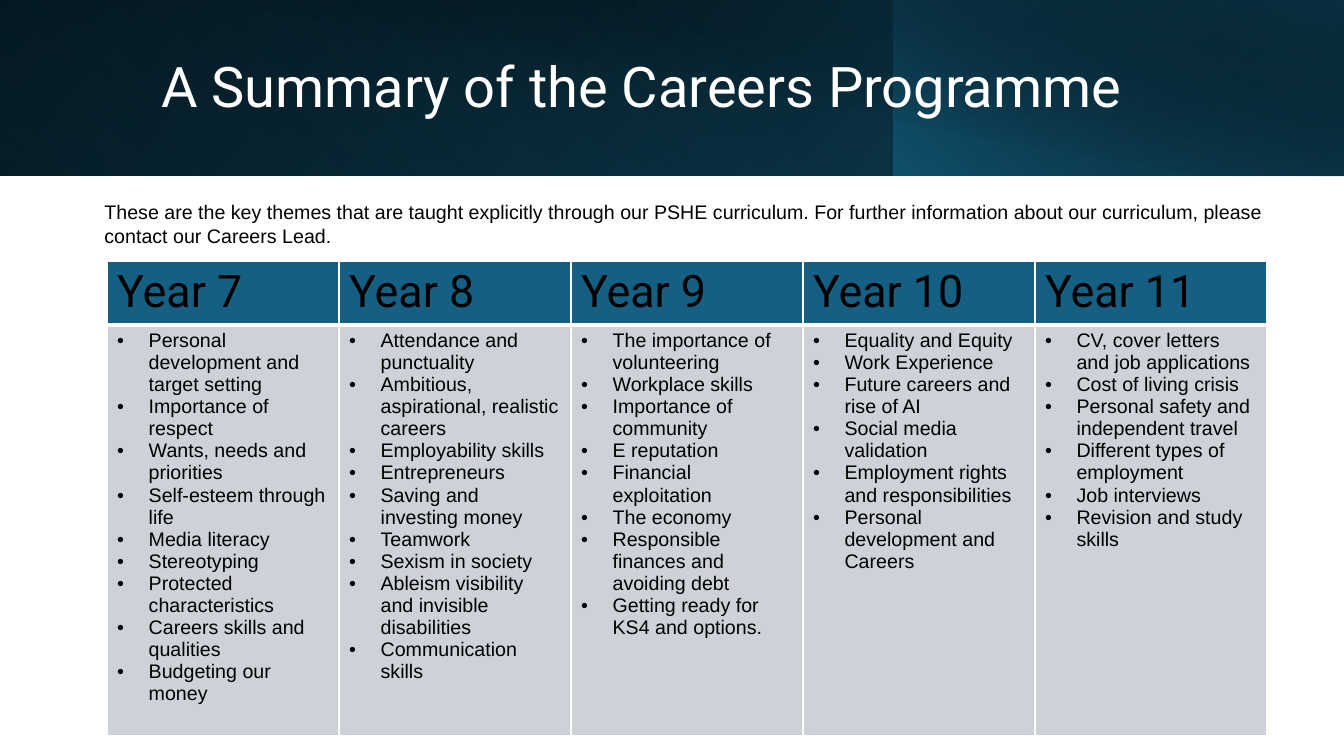
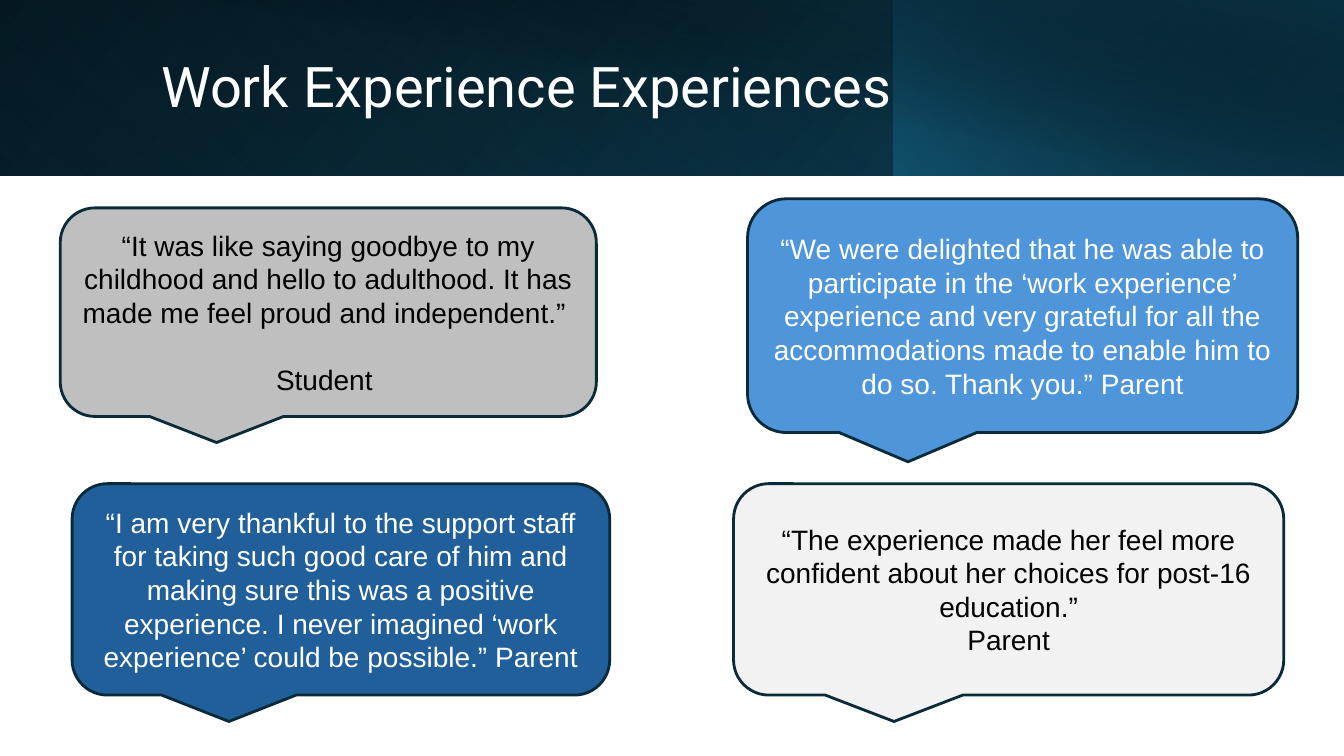
from dataclasses import dataclass

from lxml import etree
from pptx import Presentation
from pptx.dml.color import RGBColor
from pptx.enum.shapes import MSO_SHAPE
from pptx.enum.text import MSO_ANCHOR, MSO_AUTO_SIZE, PP_ALIGN
from pptx.oxml import parse_xml
from pptx.oxml.ns import nsdecls, qn
from pptx.util import Pt

RECTANGLE = MSO_SHAPE.RECTANGLE
CALLOUT = MSO_SHAPE.ROUNDED_RECTANGULAR_CALLOUT
MIDDLE = MSO_ANCHOR.MIDDLE
NO_AUTOSIZE = MSO_AUTO_SIZE.NONE
LEFT, CENTER = PP_ALIGN.LEFT, PP_ALIGN.CENTER
TITLE_ONLY = 5


@dataclass(frozen=True)
class Theme:
    black: str = "000000"
    white: str = "FFFFFF"
    teal: str = "156082"
    deep_teal: str = "0F4861"
    night: str = "0A3041"
    outline: str = "092A39"
    cell: str = "CCD2D8"
    grey: str = "BFBFBF"
    pale: str = "F2F2F2"
    sky: str = "4E95D9"
    blue: str = "215F9A"
    heading_font: str = "Roboto"
    body_font: str = "Arial"
    title_size: int = 40
    year_size: int = 32
    quote_size: int = 20
    body_size: int = 14


THEME = Theme()

# Header bands: box, rotation, mirrored, gradient angle, stops (position, colour, opacity)
BANDS = [
    ((0, 0, 960, 125.5), 0, True, 140,
     [(0, THEME.black, 100), (100, THEME.deep_teal, 100)]),
    ((0, 0, 639.5, 125.5), 180, True, 230,
     [(0, THEME.teal, 0), (20, THEME.teal, 0), (100, THEME.night, 55)]),
    ((638.5, 0, 321.5, 125.5), 0, True, 220,
     [(0, THEME.teal, 65), (100, THEME.black, 29)]),
    ((36, 0, 924, 126), 0, False, 280,
     [(0, THEME.black, 0), (50, THEME.black, 0),
      (99, THEME.night, 51), (100, THEME.night, 51)]),
]

INTRO = ("These are the key themes that are taught explicitly through our PSHE curriculum. "
         "For further information about our curriculum, please contact our Careers Lead.")

PROGRAMME = {
    "Year 7": [
        "Personal development and target setting", "Importance of respect",
        "Wants, needs and priorities", "Self-esteem through life", "Media literacy",
        "Stereotyping", "Protected characteristics", "Careers skills and qualities",
        "Budgeting our money",
    ],
    "Year 8": [
        "Attendance and punctuality", "Ambitious, aspirational, realistic careers",
        "Employability skills", "Entrepreneurs", "Saving and investing money", "Teamwork",
        "Sexism in society", "Ableism visibility and invisible disabilities",
        "Communication skills",
    ],
    "Year 9": [
        "The importance of volunteering", "Workplace skills", "Importance of community",
        "E reputation", "Financial exploitation", "The economy",
        "Responsible finances and avoiding debt", "Getting ready for KS4 and options.",
    ],
    "Year 10": [
        "Equality and Equity", "Work Experience", "Future careers and rise of AI",
        "Social media validation", "Employment rights and responsibilities",
        "Personal development and Careers",
    ],
    "Year 11": [
        "CV, cover letters and job applications", "Cost of living crisis",
        "Personal safety and independent travel", "Different types of employment",
        "Job interviews", "Revision and study skills",
    ],
}

# Quotes: box, fill, text colour, gap above the speaker, paragraphs
QUOTES = [
    ((43, 148.5, 383, 149), THEME.grey, THEME.black, 24,
     ["“It was like saying goodbye to my childhood and hello to adulthood. "
      "It has made me feel proud and independent.” ", "Student "]),
    ((534, 142, 393, 167), THEME.sky, THEME.white, 0,
     ["“We were delighted that he was able to participate in the ‘work experience’ "
      "experience and very grateful for all the accommodations made to enable him to do so. "
      "Thank you.” Parent"]),
    ((524, 345.5, 393, 151), THEME.pale, THEME.black, 0,
     ["“The experience made her feel more confident about her choices for post-16 "
      "education.”", "Parent"]),
    ((51.5, 345.5, 384, 151), THEME.blue, THEME.white, 0,
     ["“I am very thankful to the support staff for taking such good care of him and making "
      "sure this was a positive experience. I never imagined ‘work experience’ could be "
      "possible.” Parent"]),
]


def points(box):
    return [Pt(length) for length in box]


def apply(target, values):
    for name, value in values.items():
        setattr(target, name, value)


def write(frame, paragraphs, size, font=THEME.body_font, color=THEME.black,
          bulleted=False, **paragraph_format):
    """Fill a text frame with one run per paragraph."""
    for index, text in enumerate(paragraphs):
        paragraph = frame.add_paragraph() if index else frame.paragraphs[0]
        if bulleted:
            add_bullet(paragraph)
        apply(paragraph, paragraph_format)
        run = paragraph.add_run()
        run.text = text
        apply(run.font, {"name": font, "size": Pt(size), "bold": False})
        run.font.color.rgb = RGBColor.from_string(color)


def add_bullet(paragraph, indent=22.5):
    properties = paragraph._p.get_or_add_pPr()
    properties.set("marL", str(Pt(indent)))
    properties.set("indent", str(-Pt(indent)))
    color = etree.SubElement(properties, qn("a:buClr"))
    etree.SubElement(color, qn("a:srgbClr"), val=THEME.black)
    etree.SubElement(properties, qn("a:buFont"), typeface=THEME.body_font)
    etree.SubElement(properties, qn("a:buChar"), char="•")


def gradient(stops, angle):
    marks = "".join(
        f'<a:gs pos="{position * 1000}"><a:srgbClr val="{color}">'
        f'<a:alpha val="{opacity * 1000}"/></a:srgbClr></a:gs>'
        for position, color, opacity in stops)
    return parse_xml(
        f'<a:gradFill {nsdecls("a")} rotWithShape="1"><a:gsLst>{marks}</a:gsLst>'
        f'<a:lin ang="{angle * 60000}" scaled="0"/></a:gradFill>')


def add_band(slide, box, rotation, mirrored, angle, stops):
    band = slide.shapes.add_shape(RECTANGLE, *points(box))
    band.shadow.inherit = False
    band.rotation = rotation
    band.line.fill.background()
    properties = band._element.spPr
    if mirrored:
        properties.find(qn("a:xfrm")).set("flipH", "1")
    properties.find(qn("a:prstGeom")).addnext(gradient(stops, angle))


def add_titled_slide(deck, title_text):
    slide = deck.slides.add_slide(deck.slide_layouts[TITLE_ONLY])
    for band in BANDS:
        add_band(slide, *band)

    title = slide.shapes.title
    apply(title, dict(zip(("left", "top", "width", "height"), points((108, 23, 779, 81)))))
    apply(title.text_frame, {"vertical_anchor": MIDDLE, "word_wrap": True,
                             "auto_size": NO_AUTOSIZE})
    write(title.text_frame, [title_text], THEME.title_size, THEME.heading_font, THEME.white,
          alignment=LEFT, line_spacing=0.9)
    # The title stands in front of the bands
    slide.shapes._spTree.append(title._element)
    return slide


def add_intro(slide):
    intro = slide.shapes.add_textbox(*points((67.5, 139.5, 849, 41)))
    intro.text_frame.word_wrap = True
    write(intro.text_frame, [INTRO], THEME.body_size)


def set_borders(cell, widths):
    properties = cell._tc.get_or_add_tcPr()
    for position, (side, width) in enumerate(widths.items()):
        properties.insert(position, parse_xml(
            f'<a:{side} {nsdecls("a")} w="{Pt(width)}"><a:solidFill>'
            f'<a:srgbClr val="{THEME.white}"/></a:solidFill></a:{side}>'))


def style_cell(cell, fill, borders):
    cell.fill.solid()
    cell.fill.fore_color.rgb = RGBColor.from_string(fill)
    set_borders(cell, borders)


def add_programme_table(slide):
    table = slide.shapes.add_table(
        2, len(PROGRAMME), *points((76.5, 186.5, 828.5, 338.5))).table
    apply(table, {"first_row": False, "horz_banding": False})
    for row, height in zip(table.rows, (45.5, 293)):
        row.height = Pt(height)
    for column, (year, topics) in enumerate(PROGRAMME.items()):
        table.columns[column].width = Pt(165.7)
        header, body = table.cell(0, column), table.cell(1, column)
        write(header.text_frame, [year], THEME.year_size, THEME.heading_font)
        write(body.text_frame, topics, THEME.body_size, bulleted=True)
        style_cell(header, THEME.teal, {"lnL": 1, "lnR": 1, "lnT": 1, "lnB": 3})
        style_cell(body, THEME.cell, {"lnL": 1, "lnR": 1, "lnT": 3, "lnB": 1})


def add_quote(slide, box, fill, color, speaker_gap, paragraphs):
    bubble = slide.shapes.add_shape(CALLOUT, *points(box))
    bubble.shadow.inherit = False
    bubble.fill.solid()
    bubble.fill.fore_color.rgb = RGBColor.from_string(fill)
    bubble.line.color.rgb = RGBColor.from_string(THEME.outline)
    bubble.line.width = Pt(2)
    frame = bubble.text_frame
    apply(frame, {"word_wrap": True, "vertical_anchor": MIDDLE})
    write(frame, paragraphs, THEME.quote_size, color=color, alignment=CENTER)
    if speaker_gap:
        frame.paragraphs[-1].space_before = Pt(speaker_gap)


def main():
    deck = Presentation()
    apply(deck, {"slide_width": Pt(960), "slide_height": Pt(540)})

    # Themes by year
    summary = add_titled_slide(deck, "A Summary of the Careers Programme")
    add_intro(summary)
    add_programme_table(summary)

    # Feedback on work experience
    feedback = add_titled_slide(deck, "Work Experience Experiences")
    for quote in QUOTES:
        add_quote(feedback, *quote)

    deck.save("out.pptx")


if __name__ == "__main__":
    main()
